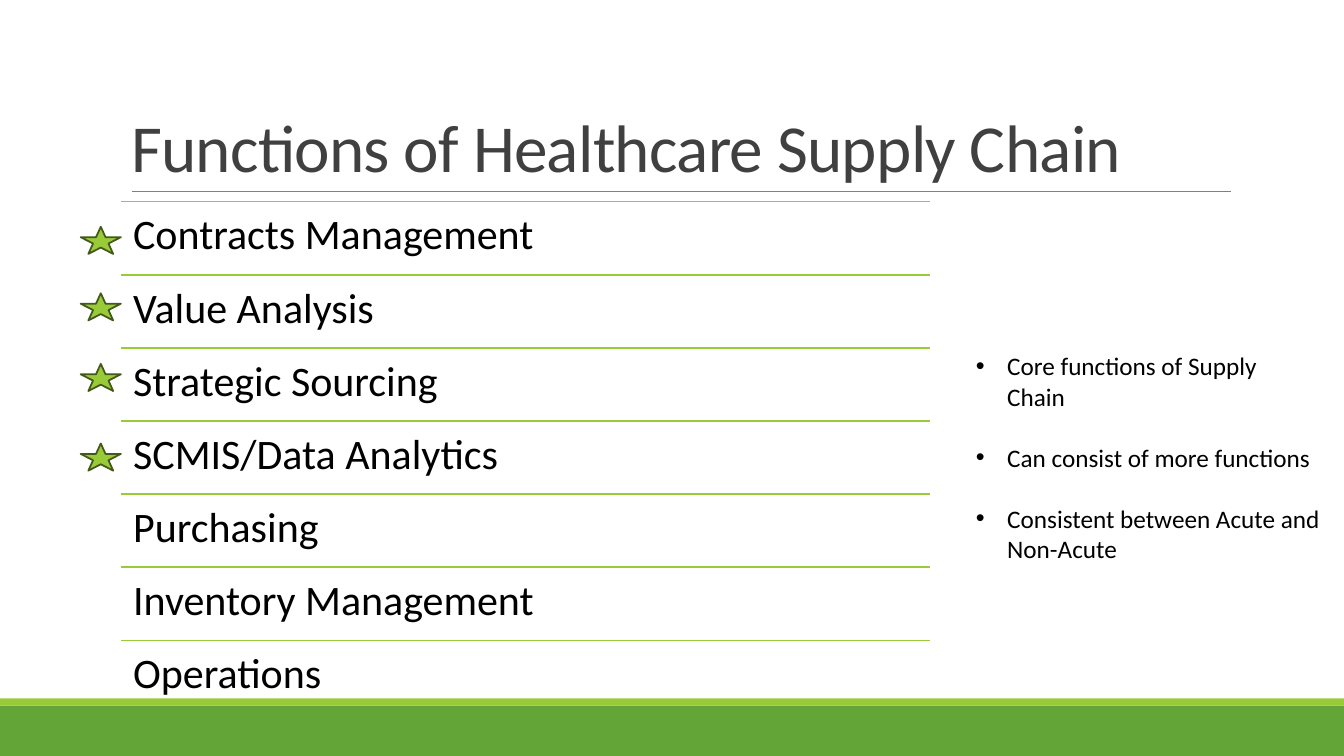
from pptx import Presentation
from pptx.dml.color import RGBColor
from pptx.enum import shapes, text
from pptx.oxml import parse_xml
from pptx.oxml.ns import nsdecls
from pptx.util import Inches, Pt

GREEN = RGBColor(0x63, 0xA5, 0x37)
LIME = RGBColor(0x99, 0xCB, 0x38)
OLIVE = RGBColor(0x43, 0x59, 0x19)
GRAY = RGBColor(0x80, 0x80, 0x80)
DARK = RGBColor(0x40, 0x40, 0x40)
BLACK = RGBColor(0, 0, 0)

FUNCTIONS = ["Contracts Management", "Value Analysis", "Strategic Sourcing",
             "SCMIS/Data Analytics", "Purchasing", "Inventory Management",
             "Operations"]
NOTES = ["Core functions of Supply Chain", "Can consist of more functions",
         "Consistent between Acute and Non-Acute"]
STAR_TOPS = [2.25, 2.91, 3.61, 4.4]
LIST_LEFT, LIST_TOP, LIST_WIDTH, LIST_HEIGHT = 1.2, 2, 8.02, 5.08
ROW_PITCH = LIST_HEIGHT / len(FUNCTIONS)


def apply(target, values):
    for name, value in values.items():
        setattr(target, name, value)


class SlideBuilder:
    font = "Calibri"

    def __init__(self, slide):
        self.s = slide

    def fill_text(self, sp, lines, size, color, frame, para):
        """Fill a shape with one formatted paragraph per line."""
        tf = sp.text_frame
        apply(tf, {"word_wrap": True, "auto_size": text.MSO_AUTO_SIZE.NONE, **frame})
        for i, line in enumerate(lines):
            p = tf.paragraphs[0] if i == 0 else tf.add_paragraph()
            apply(p, {"alignment": text.PP_ALIGN.LEFT, **para})
            r = p.add_run()
            r.text = line
            apply(r.font, {"name": self.font, "size": Pt(size)})
            r.font.color.rgb = color
        return tf

    def place(self, sp, *box):
        apply(sp, dict(zip(("left", "top", "width", "height"), map(Inches, box))))

    def title(self, line, *box):
        sp = self.s.shapes.title
        self.place(sp, *box)
        tf = self.fill_text(sp, [line], 48, DARK,
                            {"vertical_anchor": text.MSO_ANCHOR.BOTTOM},
                            {"line_spacing": 0.85})
        tf.paragraphs[0].runs[0]._r.get_or_add_rPr().set("spc", "-50")

    def bullets(self, lines, *box):
        sp = self.s.placeholders[1]
        self.place(sp, *box)
        tf = self.fill_text(sp, lines, 18, BLACK,
                            {"vertical_anchor": text.MSO_ANCHOR.TOP},
                            {"space_before": Pt(0), "space_after": Pt(22)})
        for p in tf.paragraphs:
            pPr = p._p.get_or_add_pPr()
            pPr.set("marL", str(Inches(0.31)))
            pPr.set("indent", str(Inches(-0.31)))
            pPr.append(parse_xml(f'<a:buFont {nsdecls("a")} typeface="Arial"/>'))
            pPr.append(parse_xml(f'<a:buChar {nsdecls("a")} char="•"/>'))

    def label(self, line, *box):
        sp = self.s.shapes.add_textbox(*map(Inches, box))
        margins = {f"margin_{side}": Inches(0.12)
                   for side in ("left", "top", "right", "bottom")}
        self.fill_text(sp, [line], 30, BLACK, margins, {"line_spacing": 0.9})

    def shape(self, kind, fill, *box, line=None):
        sp = self.s.shapes.add_shape(kind, *map(Inches, box))
        sp.shadow.inherit = False
        sp.fill.solid()
        sp.fill.fore_color.rgb = fill
        if line is None:
            sp.line.fill.background()
        else:
            sp.line.color.rgb = line
            sp.line.width = Pt(1.25)

    def rule(self, x, y, width, color, weight):
        rule = self.s.shapes.add_connector(
            shapes.MSO_CONNECTOR.STRAIGHT, *map(Inches, (x, y, x + width, y)))
        rule.line.color.rgb = color
        rule.line.width = Pt(weight)
        rule._element.spPr.append(parse_xml(f'<a:effectLst {nsdecls("a")}/>'))


def main():
    prs = Presentation()
    prs.slide_width, prs.slide_height = Inches(13.33), Inches(7.5)
    b = SlideBuilder(prs.slides.add_slide(prs.slide_layouts[1]))
    kind = shapes.MSO_SHAPE

    b.shape(kind.RECTANGLE, GREEN, 0, 7, 13.33, 0.5)
    b.shape(kind.RECTANGLE, LIME, 0, 6.93, 13.33, 0.07)
    b.rule(1.31, 1.9, 10.9, GRAY, 0.5)
    b.title("Functions of Healthcare Supply Chain", 1.2, 0.31, 11, 1.59)

    for i, function in enumerate(FUNCTIONS):
        top = LIST_TOP + i * ROW_PITCH
        b.rule(LIST_LEFT, top, LIST_WIDTH, LIME, 1.25)
        b.label(function, LIST_LEFT, top, LIST_WIDTH, ROW_PITCH)

    b.bullets(NOTES, 9.58, 3.43, 3.61, 2.22)
    for top in STAR_TOPS:
        b.shape(kind.STAR_5_POINT, LIME, 0.8, top, 0.4, 0.27, line=OLIVE)

    prs.save("out.pptx")


if __name__ == "__main__":
    main()
